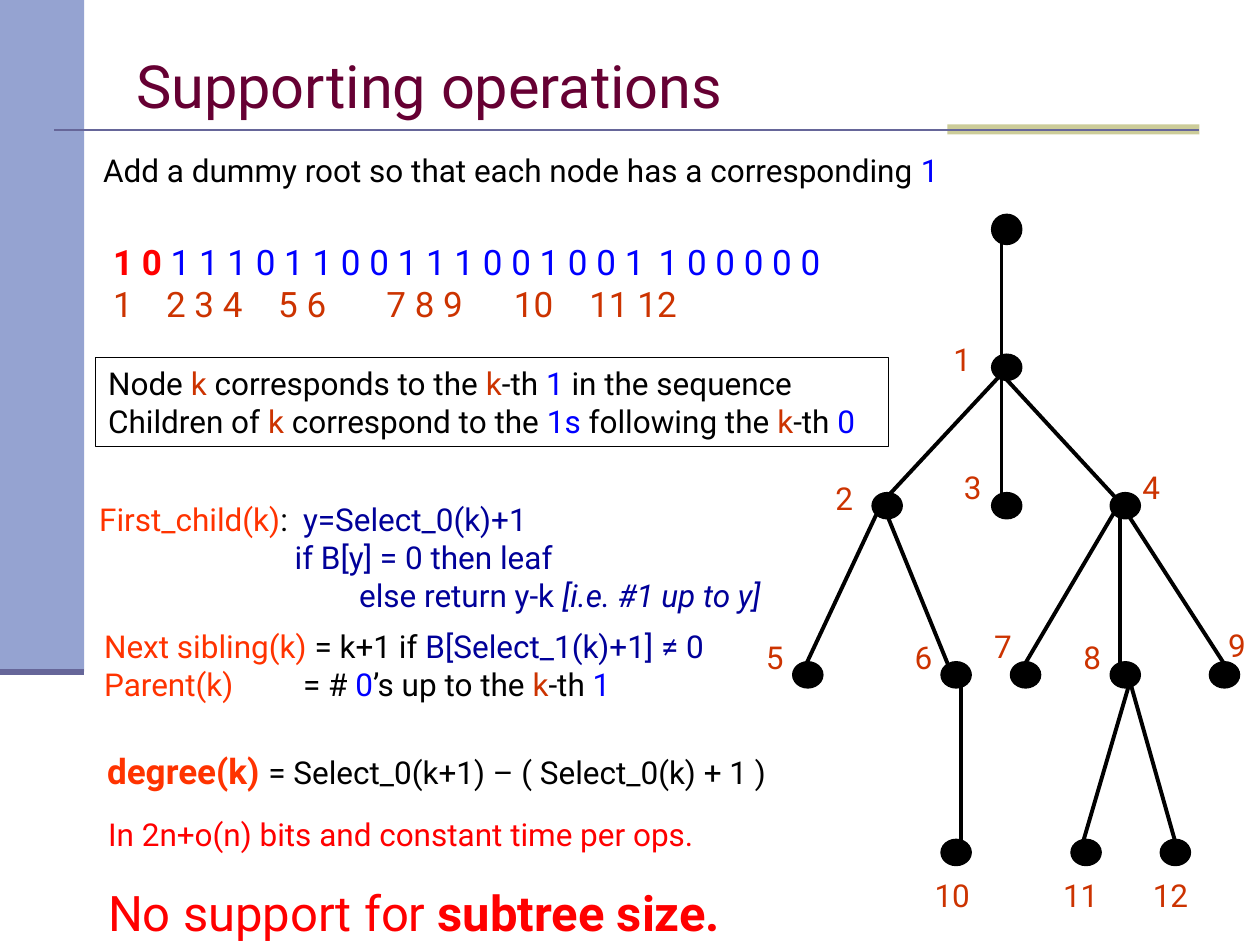
from lxml import etree
from pptx import Presentation
from pptx.dml.color import RGBColor
from pptx.enum import shapes, text
from pptx.oxml.ns import qn
from pptx.util import Cm, Pt

FONT = "Roboto"
BLACK, RED, BLUE, NAVY = "000000", "FF0000", "0000FF", "000099"
RUST, ORANGE, PLUM = "CC3300", "FF3300", "660033"
SLATE, PERIWINKLE, SAND = "666699", "95A3D1", "CCCC99"

# Node: left, top of its dot
NODES = {
    "root": (19.99, 4.32), "1": (19.99, 7.14),
    "2": (17.58, 9.93), "3": (19.99, 9.93), "4": (22.38, 9.93),
    "5": (15.98, 13.34), "6": (18.97, 13.34), "7": (20.37, 13.34),
    "8": (22.38, 13.34), "9": (24.38, 13.34),
    "10": (18.97, 16.92), "11": (21.59, 16.92), "12": (23.39, 16.92),
}
LABELS = {
    "1": (18.97, 6.73), "2": (16.59, 9.53), "3": (19.18, 9.32),
    "4": (22.78, 9.32), "5": (15.19, 12.73), "6": (18.19, 12.73),
    "7": (19.79, 12.52), "8": (21.59, 12.73), "9": (24.51, 12.5),
    "10": (18.59, 17.53), "11": (21.18, 17.53), "12": (22.99, 17.53),
}
# Where an edge meets a dot, measured from the dot's top left corner
CENTRE, LOW, RIGHT, LOW_RIGHT = (0.2, 0.2), (0.2, 0.4), (0.4, 0.2), (0.4, 0.4)
EDGES = [
    ("root", "1", LOW, CENTRE),
    ("1", "2", LOW, CENTRE), ("1", "3", LOW, CENTRE), ("1", "4", LOW, CENTRE),
    ("2", "5", CENTRE, CENTRE), ("2", "6", CENTRE, CENTRE),
    ("4", "7", CENTRE, CENTRE), ("4", "8", CENTRE, CENTRE),
    ("4", "9", CENTRE, RIGHT),
    ("6", "10", RIGHT, RIGHT),
    ("8", "11", LOW_RIGHT, CENTRE), ("8", "12", LOW_RIGHT, LOW_RIGHT),
]


def rgb(code):
    return RGBColor.from_string(code)


def style_font(font, size, colour, bold=False, italic=False):
    font.name, font.size = FONT, Pt(size)
    font.bold, font.italic = bold, italic
    font.color.rgb = rgb(colour)


def set_tabs(paragraph, stops):
    tab_list = etree.SubElement(paragraph._p.get_or_add_pPr(), qn("a:tabLst"))
    for stop in stops:
        etree.SubElement(tab_list, qn("a:tab"), pos=str(Cm(stop)), algn="l")


def write(frame, lines, size=18, tabs=()):
    """Fill frame; a line is a list of (words, colour, optional font options),
    and tabs holds the tab stops of each line."""
    frame.word_wrap = True
    for number, line in enumerate(lines):
        paragraph = frame.paragraphs[0] if number == 0 else frame.add_paragraph()
        paragraph.alignment = text.PP_ALIGN.LEFT
        for words, colour, *options in line:
            run = paragraph.add_run()
            run.text = words
            style_font(run.font, **{"size": size, "colour": colour,
                                    **(options[0] if options else {})})
        if number < len(tabs) and tabs[number]:
            set_tabs(paragraph, tabs[number])


def add_text(slide, left, top, width, height, lines, **options):
    box = slide.shapes.add_textbox(Cm(left), Cm(top), Cm(width), Cm(height))
    write(box.text_frame, lines, **options)
    return box


def add_shape(slide, kind, left, top, width, height, fill=None, line=None):
    shape = slide.shapes.add_shape(kind, Cm(left), Cm(top), Cm(width), Cm(height))
    shape.shadow.inherit = False
    if fill:
        shape.fill.solid()
        shape.fill.fore_color.rgb = rgb(fill)
    else:
        shape.fill.background()
    if line:
        shape.line.color.rgb = rgb(line)
        shape.line.width = Pt(0.75)
    else:
        shape.line.fill.background()
    return shape


def add_line(slide, start, end, colour, width):
    line = slide.shapes.add_connector(
        shapes.MSO_CONNECTOR.STRAIGHT, *(Cm(value) for value in (*start, *end)))
    line.line.color.rgb = rgb(colour)
    line.line.width = Pt(width)
    etree.SubElement(line._element.spPr, qn("a:effectLst"))


def add_frame(slide):
    rectangle = shapes.MSO_SHAPE.RECTANGLE
    add_shape(slide, rectangle, 0, 0, 1.7, 13.54, PERIWINKLE)
    add_shape(slide, rectangle, 19.1, 2.51, 5.08, 0.2, SAND)
    add_line(slide, (1.09, 2.62), (24.18, 2.62), SLATE, 1.5)
    add_line(slide, (0, 13.54), (1.7, 13.54), SLATE, 3.5)


def add_title(slide, words):
    title = slide.shapes.title
    title.left, title.top = Cm(2.49), Cm(0.71)
    title.width, title.height = Cm(21.59), Cm(2.01)
    title.text_frame.text = words
    title.text_frame.vertical_anchor = text.MSO_ANCHOR.MIDDLE
    paragraph = title.text_frame.paragraphs[0]
    paragraph.alignment = text.PP_ALIGN.LEFT
    style_font(paragraph.runs[0].font, 34, PLUM)


def add_tree(slide):
    for node, (left, top) in NODES.items():
        height = 0.61 if node == "root" else 0.53
        add_shape(slide, shapes.MSO_SHAPE.OVAL, left, top, 0.61, height,
                  BLACK, BLACK)
    for parent, child, leave, arrive in EDGES:
        start = [a + b for a, b in zip(NODES[parent], leave)]
        end = [a + b for a, b in zip(NODES[child], arrive)]
        add_line(slide, start, end, BLACK, 2.25)
    for node, (left, top) in LABELS.items():
        width = 0.91 if len(node) == 1 else 1.32
        add_text(slide, left, top, width, 1.02, [[(node, RUST)]])


def add_bit_sequence(slide):
    add_text(slide, 1.83, 2.92, 20.88, 1.02, [
        [("Add a dummy root so that each node has a corresponding ", BLACK),
         ("1", BLUE)]])
    add_text(slide, 2.03, 4.72, 15.88, 1.96, [
        [("1 0", RED, {"bold": True}),
         (" 1 1 1 0 1 1 0 0 1 1 1 0 0 1 0 0 1\t1 0 0 0 0 0", BLUE)],
        [("1\t2 3 4\t5 6\t7 8 9\t10\t11 12", RUST)],
    ], size=20, tabs=[[11], [1.07, 3.33, 5.51, 8.08, 9.6]])
    rule = add_shape(slide, shapes.MSO_SHAPE.RECTANGLE,
                     1.93, 7.21, 15.98, 1.8, line=BLACK)
    rule.text_frame.vertical_anchor = text.MSO_ANCHOR.TOP
    write(rule.text_frame, [
        [("Node ", BLACK), ("k", RUST), (" corresponds to the ", BLACK),
         ("k", RUST), ("-th ", BLACK), ("1", BLUE),
         (" in the sequence", BLACK)],
        [("Children of ", BLACK), ("k", RUST), (" correspond to the ", BLACK),
         ("1s", BLUE), (" following the ", BLACK), ("k", RUST),
         ("-th ", BLACK), ("0", BLUE)],
    ])


def add_operations(slide):
    add_text(slide, 1.75, 9.96, 15.11, 2.57, [
        [("First_child(k)", ORANGE), (":\t", BLACK), ("y=Select_0(k)+1", NAVY)],
        [("\tif B[y] = 0 then leaf", NAVY)],
        [("\telse return y-k ", NAVY),
         ("[i.e. #1 up to y]", NAVY, {"italic": True})],
    ], tabs=[[4.11], [3.94], [5.24]])
    add_text(slide, 1.85, 12.52, 13.69, 1.8, [
        [("Next sibling(k)", ORANGE), (" = k+1 if ", BLACK),
         ("B[Select_1(k)+1] ≠ 0", NAVY)],
        [("Parent(k)", ORANGE), ("\t= # ", BLACK), ("0", BLUE),
         ("’s up to the ", BLACK), ("k", RUST), ("-th ", BLACK), ("1", BLUE)],
    ], tabs=[[], [4.01]])
    add_text(slide, 1.91, 14.99, 15.04, 1.12, [
        [("degree(k) ", ORANGE, {"size": 20, "bold": True}),
         ("= Select_0(k+1) – ( Select_0(k) + 1 )", BLACK)]])
    summary = add_text(slide, 1.93, 16.31, 14.58, 2.82, [
        [("In 2n+o(n) bits and constant time per ops.", RED)],
        [("No support for ", RED, {"size": 28}),
         ("subtree size.", RED, {"size": 28, "bold": True})],
    ])
    summary.text_frame.paragraphs[1].line_spacing = 1.5


def main():
    deck = Presentation()
    deck.slide_width, deck.slide_height = Cm(25.4), Cm(19.05)
    slide = deck.slides.add_slide(deck.slide_layouts[5])
    add_frame(slide)
    add_title(slide, "Supporting operations")
    add_tree(slide)
    add_bit_sequence(slide)
    add_operations(slide)
    deck.save("out.pptx")


if __name__ == "__main__":
    main()
